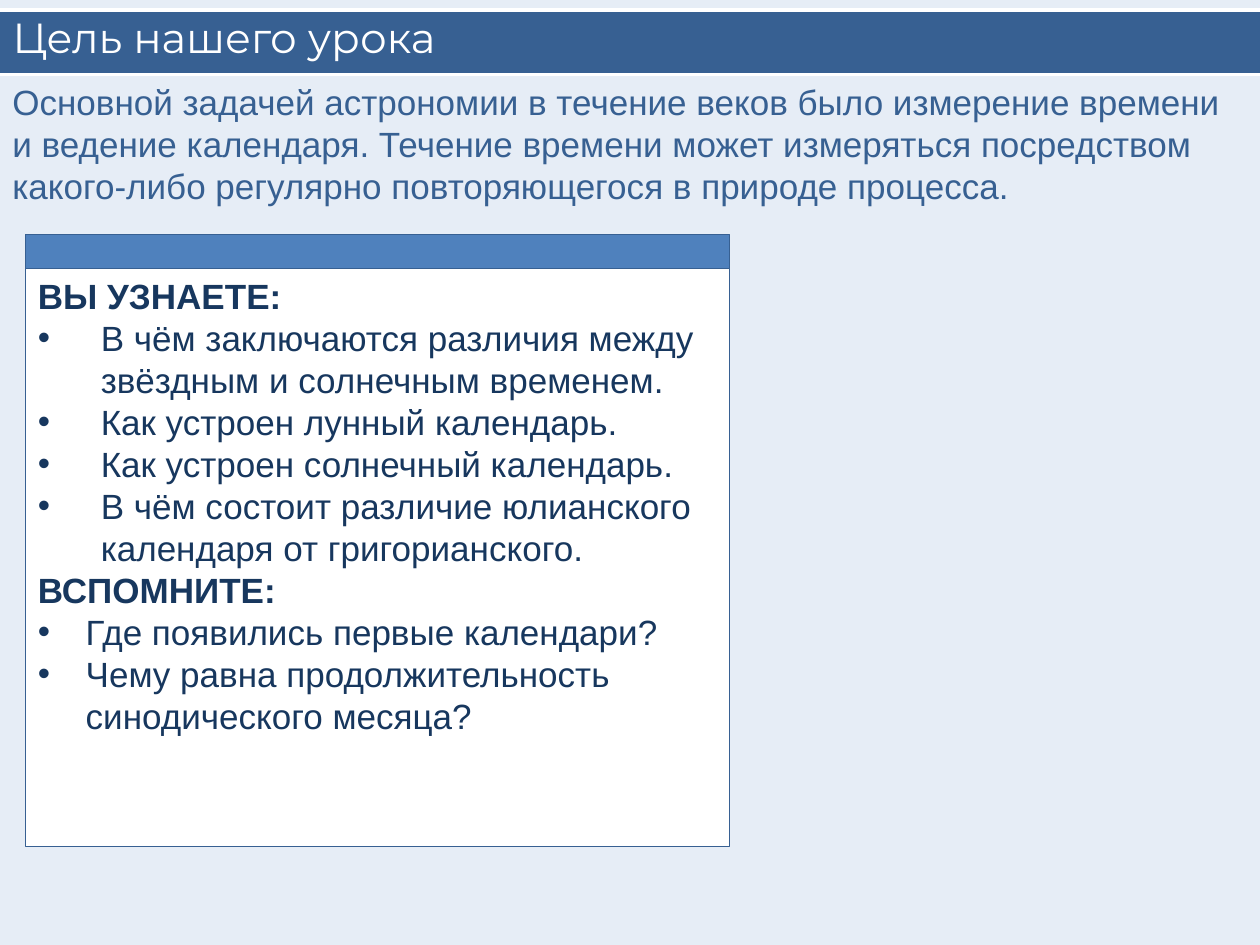
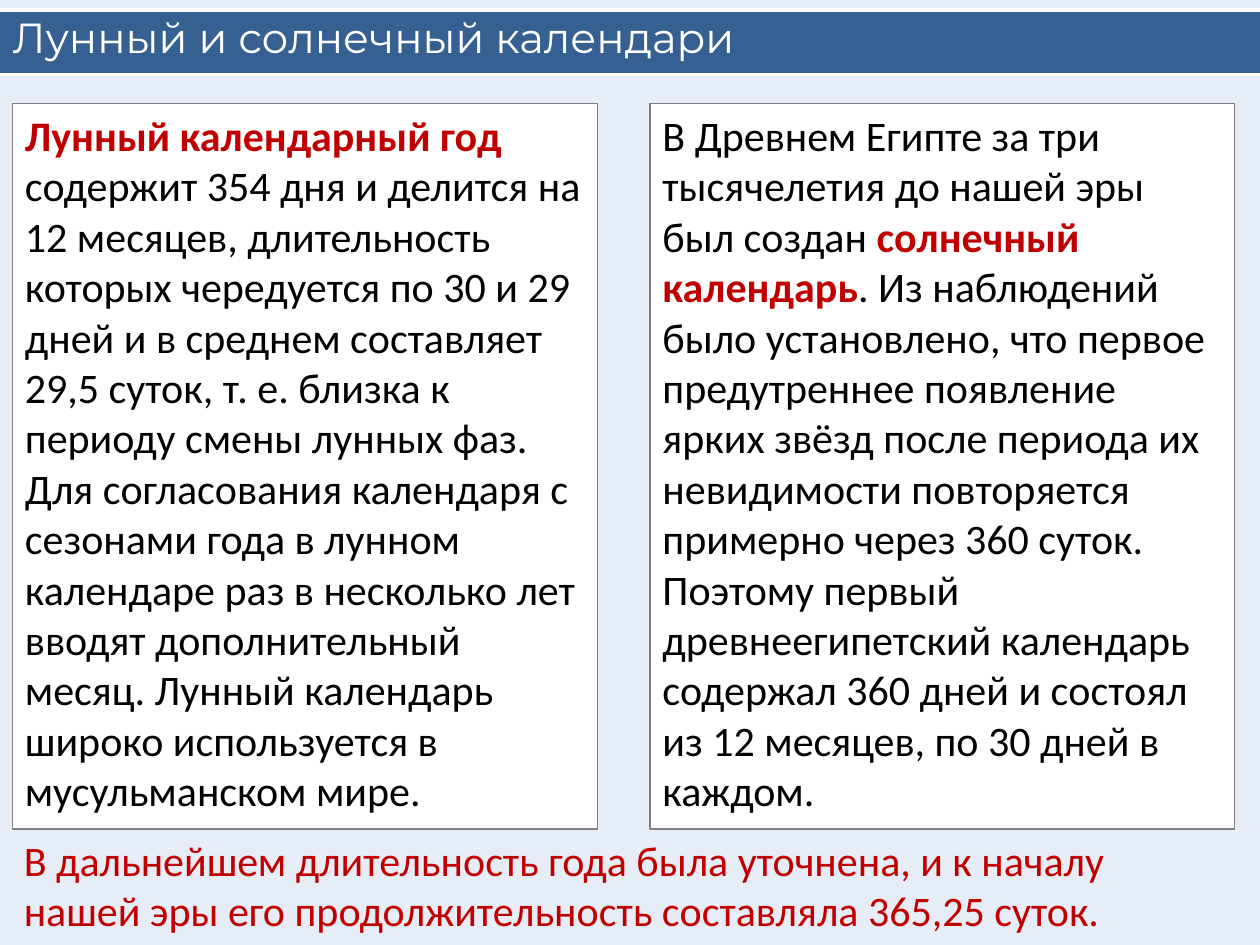
"""Build two lesson slides about time and the lunar and solar calendars."""
import pptx
import pptx.dml.color
import pptx.enum.shapes
import pptx.enum.text
import pptx.oxml
import pptx.util

Inches = pptx.util.Inches
Pt = pptx.util.Pt
RGB = pptx.dml.color.RGBColor
SHAPE = pptx.enum.shapes.MSO_SHAPE
ANCHOR = pptx.enum.text.MSO_ANCHOR
NS = 'xmlns:a="http://schemas.openxmlformats.org/drawingml/2006/main"'

PALE = RGB(0xE6, 0xED, 0xF6)
BLUE = RGB(0x37, 0x60, 0x92)
MID_BLUE = RGB(0x4F, 0x81, 0xBD)
NAVY = RGB(0x17, 0x37, 0x5E)
RED = RGB(0xC0, 0x00, 0x00)
GREY = RGB(0x80, 0x80, 0x80)
WHITE = RGB(0xFF, 0xFF, 0xFF)
BLACK = RGB(0x00, 0x00, 0x00)

TITLE = {"name": "Montserrat", "size": Pt(24), "color": WHITE}
INTRO = {"name": "Arial", "size": Pt(20), "color": BLUE}
LIST = {"name": "Arial", "size": Pt(20), "color": NAVY, "bold": False}
TEXT = {"name": "Calibri", "size": Pt(24), "color": BLACK}
KEY = TEXT | {"color": RED, "bold": True}


def add_runs(p, runs):
    """Append (text, format) runs to a left-aligned paragraph."""
    p.alignment = pptx.enum.text.PP_ALIGN.LEFT
    for text, fmt in runs:
        r = p.add_run()
        r.text = text
        for key, value in fmt.items():
            if key == "color":
                r.font.color.rgb = value
            else:
                setattr(r.font, key, value)


def add_text(s, box, runs, fill=None, line=None):
    """Add a wrapped text box, with a fill and a line if given."""
    sp = s.shapes.add_textbox(*map(Inches, box))
    sp.text_frame.word_wrap = True
    if fill:
        sp.fill.solid()
        sp.fill.fore_color.rgb = fill
        sp.line.color.rgb = line
        sp.line.width = Pt(0.75)
    add_runs(sp.text_frame.paragraphs[0], runs)


prs = pptx.Presentation()
prs.slide_width, prs.slide_height = Inches(10), Inches(7.5)
prs.slide_master.background.fill.solid()
prs.slide_master.background.fill.fore_color.rgb = PALE

slides = []
for layout, heading in ((1, "Цель нашего урока"), (5, "Лунный и солнечный календари")):
    s = prs.slides.add_slide(prs.slide_layouts[layout])
    slides.append(s)
    band = s.shapes.add_group_shape()
    sp = band.shapes.add_shape(SHAPE.RECTANGLE, 0, Inches(0.08), Inches(10), Inches(0.51))
    sp.shadow.inherit = False
    sp.fill.solid()
    sp.fill.fore_color.rgb = BLUE
    sp.line.fill.background()
    for y in (0.59, 0.08):
        edge = band.shapes.add_connector(
            pptx.enum.shapes.MSO_CONNECTOR.STRAIGHT, 0, Inches(y), Inches(10), Inches(y))
        edge.line.color.rgb = WHITE
        edge.line.width = Pt(2)
        edge.element.spPr.append(pptx.oxml.parse_xml(f"<a:effectLst {NS}/>"))

    title = s.shapes.title
    title.left, title.top, title.width, title.height = map(Inches, (0, -0.04, 10, 0.67))
    title.text_frame.vertical_anchor = ANCHOR.MIDDLE
    title.text_frame.auto_size = pptx.enum.text.MSO_AUTO_SIZE.NONE
    add_runs(title.text_frame.paragraphs[0], [(heading, TITLE)])
    title.element.getparent().append(title.element)

s = slides[0]
add_text(s, (0, 0.59, 10, 1.11), [(
    "Основной задачей астрономии в течение веков было измерение времени и ведение календаря. "
    "Течение времени может измеряться посредством какого-либо регулярно повторяющегося "
    "в природе процесса.", INTRO)])

header = s.shapes.add_shape(SHAPE.RECTANGLE, *map(Inches, (0.2, 1.86, 5.59, 0.28)))
header.shadow.inherit = False
body = s.placeholders[1]
body.left, body.top, body.width, body.height = map(Inches, (0.2, 2.13, 5.59, 4.59))
for sp, fill in ((header, MID_BLUE), (body, WHITE)):
    sp.fill.solid()
    sp.fill.fore_color.rgb = fill
    sp.line.color.rgb = BLUE
    sp.line.width = Pt(0.5)
body.element.getparent().append(body.element)

sections = [
    ("ВЫ УЗНАЕТЕ:", 0.5, [
        "В чём заключаются различия между звёздным и солнечным временем.",
        "Как устроен лунный календарь.",
        "Как устроен солнечный календарь.",
        "В чём состоит различие юлианского календаря от григорианского."]),
    ("ВСПОМНИТЕ:", 0.38, [
        "Где появились первые календари?",
        "Чему равна продолжительность синодического месяца?"]),
]
rows = []
for heading, indent, items in sections:
    rows.append((heading, 0, True))
    rows += [(item, indent, False) for item in items]

tf = body.text_frame
tf.auto_size = pptx.enum.text.MSO_AUTO_SIZE.NONE
tf.vertical_anchor = ANCHOR.TOP
for i, (text, indent, is_heading) in enumerate(rows):
    p = tf.add_paragraph() if i else tf.paragraphs[0]
    p.space_before = Pt(0)
    add_runs(p, [(text, LIST | {"bold": is_heading})])
    pPr = p._p.get_or_add_pPr()
    pPr.set("marL", str(Inches(indent)))
    pPr.set("indent", str(-Inches(indent)))
    if is_heading:
        pPr.append(pptx.oxml.parse_xml(f"<a:buNone {NS}/>"))
    else:
        pPr.append(pptx.oxml.parse_xml(f'<a:buFont {NS} typeface="Arial"/>'))
        pPr.append(pptx.oxml.parse_xml(f'<a:buChar {NS} char="•"/>'))

s = slides[1]
calendars = [
    (0.1, [
        ("Лунный календарный год ", KEY),
        ("содержит 354 дня и делится на 12 месяцев, длительность которых чередуется "
         "по 30 и 29 дней и в среднем составляет 29,5 суток, т. е. близка к периоду смены "
         "лунных фаз. Для согласования календаря с сезонами года в лунном календаре раз "
         "в несколько лет вводят дополнительный месяц. Лунный календарь широко используется "
         "в мусульманском мире.", TEXT)]),
    (5.16, [
        ("В Древнем Египте за три тысячелетия до нашей эры был создан ", TEXT),
        ("солнечный календарь", KEY),
        (". Из наблюдений было установлено, что первое предутреннее появление ярких звёзд "
         "после периода их невидимости повторяется примерно через 360 суток. Поэтому первый "
         "древнеегипетский календарь содержал 360 дней и состоял из 12 месяцев, по 30 дней "
         "в каждом.", TEXT)]),
]
for left, runs in calendars:
    add_text(s, (left, 0.82, 4.64, 5.76), runs, WHITE, GREY)

add_text(s, (0.09, 6.57, 9.71, 0.91), [(
    "В дальнейшем длительность года была уточнена, и к началу нашей эры "
    "его продолжительность составляла 365,25 суток.", TEXT | {"color": RED})])

prs.save("out.pptx")
